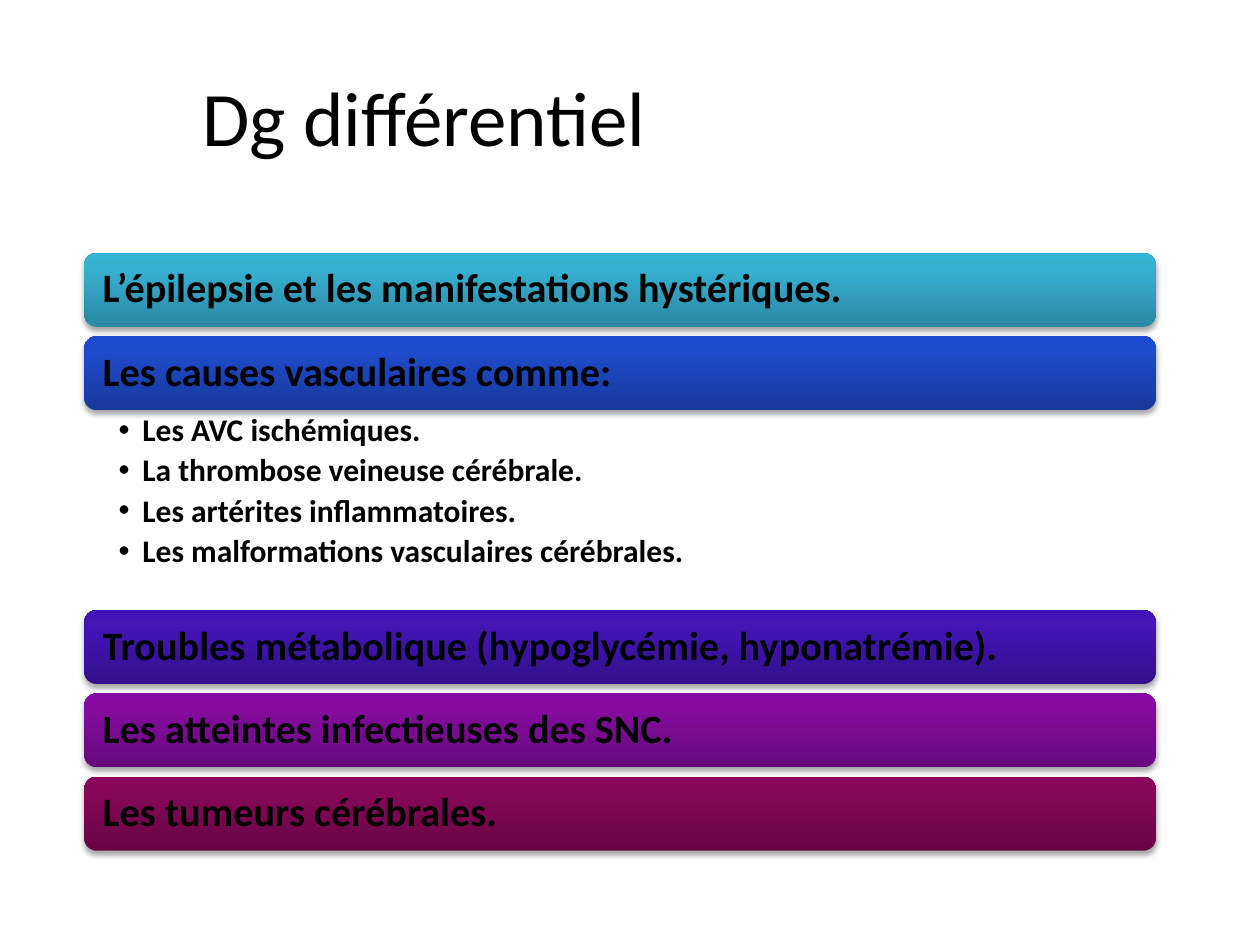
from copy import deepcopy

from lxml.etree import SubElement
from pptx import Presentation
from pptx.dml.color import RGBColor
from pptx.enum.shapes import MSO_SHAPE as Shape
from pptx.enum.text import MSO_ANCHOR as Anchor, MSO_AUTO_SIZE as AutoSize, PP_ALIGN as Align
from pptx.oxml.ns import qn
from pptx.util import Cm, Pt

BLACK = RGBColor(0x00, 0x00, 0x00)
TEAL = [RGBColor(0x2A, 0x88, 0xA2), RGBColor(0x37, 0xB1, 0xD2), RGBColor(0x34, 0xB4, 0xD6)]
BLUE = [RGBColor(0x17, 0x39, 0x9C), RGBColor(0x1E, 0x4B, 0xCB), RGBColor(0x1B, 0x49, 0xCF)]
INDIGO = [RGBColor(0x33, 0x10, 0x8C), RGBColor(0x43, 0x15, 0xB5), RGBColor(0x42, 0x12, 0xB9)]
PURPLE = [RGBColor(0x66, 0x09, 0x7B), RGBColor(0x85, 0x0C, 0x9F), RGBColor(0x87, 0x09, 0xA3)]
PLUM = [RGBColor(0x67, 0x05, 0x44), RGBColor(0x86, 0x07, 0x59), RGBColor(0x89, 0x04, 0x5A)]
STOP_POSITIONS = [0, 0.8, 1]

FONT = "Calibri"
LEFT, WIDTH = Cm(1.7), Cm(21.6)
TOP, BAR_HEIGHT, GAP = Cm(5.1), Cm(1.49), Cm(0.19)
LIST_HEIGHT = Cm(4.03)

CAUSES = [
    ("L’épilepsie et les manifestations hystériques.", TEAL, []),
    ("Les causes vasculaires comme:", BLUE, [
        "Les AVC ischémiques.",
        "La thrombose veineuse cérébrale.",
        "Les artérites inflammatoires.",
        "Les malformations vasculaires cérébrales.",
    ]),
    ("Troubles métabolique (hypoglycémie, hyponatrémie).", INDIGO, []),
    ("Les atteintes infectieuses des SNC.", PURPLE, []),
    ("Les tumeurs cérébrales.", PLUM, []),
]


def place(shape, left, top, width, height):
    """Move and size a shape."""
    shape.left, shape.top, shape.width, shape.height = left, top, width, height


def set_margins(text_frame, left, top, right, bottom):
    """Set the four insets of a text frame."""
    text_frame.margin_left, text_frame.margin_top = left, top
    text_frame.margin_right, text_frame.margin_bottom = right, bottom


def format_text(text_frame, size, bold, alignment):
    """Give every paragraph and run of a text frame the same look."""
    text_frame.word_wrap = True
    text_frame.auto_size = AutoSize.NONE
    for paragraph in text_frame.paragraphs:
        paragraph.alignment = alignment
        for run in paragraph.runs:
            run.font.name = FONT
            run.font.size = Pt(size)
            run.font.bold = bold
            run.font.color.rgb = BLACK


def fill_gradient(shape, colors):
    """Fill a shape with a three-stop gradient that runs upwards."""
    shape.fill.gradient()
    shape.fill.gradient_angle = 90
    stop_list = next(shape.element.iter(qn("a:gsLst")))
    stop_list.append(deepcopy(stop_list[-1]))
    for stop, position, color in zip(shape.fill.gradient_stops, STOP_POSITIONS, colors):
        stop.position = position
        stop.color.rgb = color


def add_drop_shadow(shape):
    """Cast a soft black shadow below a shape."""
    shape.shadow.inherit = False
    effects = next(shape.element.iter(qn("a:effectLst")))
    shadow = SubElement(effects, qn("a:outerShdw"), blurRad=str(Pt(3.1)), dist=str(Pt(1.8)),
                        dir="5400000", rotWithShape="0")
    color = SubElement(shadow, qn("a:srgbClr"), val=str(BLACK))
    SubElement(color, qn("a:alpha"), val="35000")


def set_title(slide, text):
    """Write the slide title."""
    title = slide.shapes.title
    place(title, Cm(1.1), Cm(0.74), Cm(15.6), Cm(3.18))
    title.text_frame.text = text
    title.text_frame.vertical_anchor = Anchor.MIDDLE
    title.text_frame.margin_right = Cm(0.96)
    format_text(title.text_frame, 44, False, Align.CENTER)


def add_bar(slide, top, text, colors):
    """Add a rounded gradient bar with a heading."""
    bar = slide.shapes.add_shape(Shape.ROUNDED_RECTANGLE, LEFT, top, WIDTH, BAR_HEIGHT)
    fill_gradient(bar, colors)
    bar.line.fill.background()
    add_drop_shadow(bar)
    text_frame = bar.text_frame
    text_frame.text = text
    text_frame.vertical_anchor = Anchor.MIDDLE
    set_margins(text_frame, *[Cm(0.3)] * 4)
    text_frame.paragraphs[0].line_spacing = 0.9
    format_text(text_frame, 23, True, Align.LEFT)


def set_list(body, top, items):
    """Write the bulleted list in the body placeholder."""
    place(body, LEFT, top, WIDTH, LIST_HEIGHT)
    text_frame = body.text_frame
    text_frame.text = "\n".join(items)
    text_frame.vertical_anchor = Anchor.TOP
    set_margins(text_frame, Cm(0.69), Cm(0.08), Cm(0.46), Cm(0.08))
    format_text(text_frame, 18, True, Align.LEFT)
    for paragraph in text_frame.paragraphs:
        paragraph.level = 1
        paragraph.line_spacing = 0.9
        paragraph.space_before = Pt(0)
        paragraph.space_after = Pt(3.6)
        properties = paragraph._p.get_or_add_pPr()
        properties.set("marL", str(Cm(0.48)))
        properties.set("indent", str(-Cm(0.48)))
        SubElement(properties, qn("a:buFont"), typeface="Arial")
        SubElement(properties, qn("a:buChar"), char="•")


def main():
    """Build the slide and save it."""
    presentation = Presentation()
    presentation.slide_width, presentation.slide_height = Cm(25.4), Cm(19.05)
    slide = presentation.slides.add_slide(presentation.slide_layouts[1])
    set_title(slide, "Dg différentiel")
    top = TOP
    for heading, colors, items in CAUSES:
        add_bar(slide, top, heading, colors)
        top += BAR_HEIGHT
        if items:
            set_list(slide.placeholders[1], top, items)
            top += LIST_HEIGHT
        else:
            top += GAP
    presentation.save("out.pptx")


if __name__ == "__main__":
    main()
